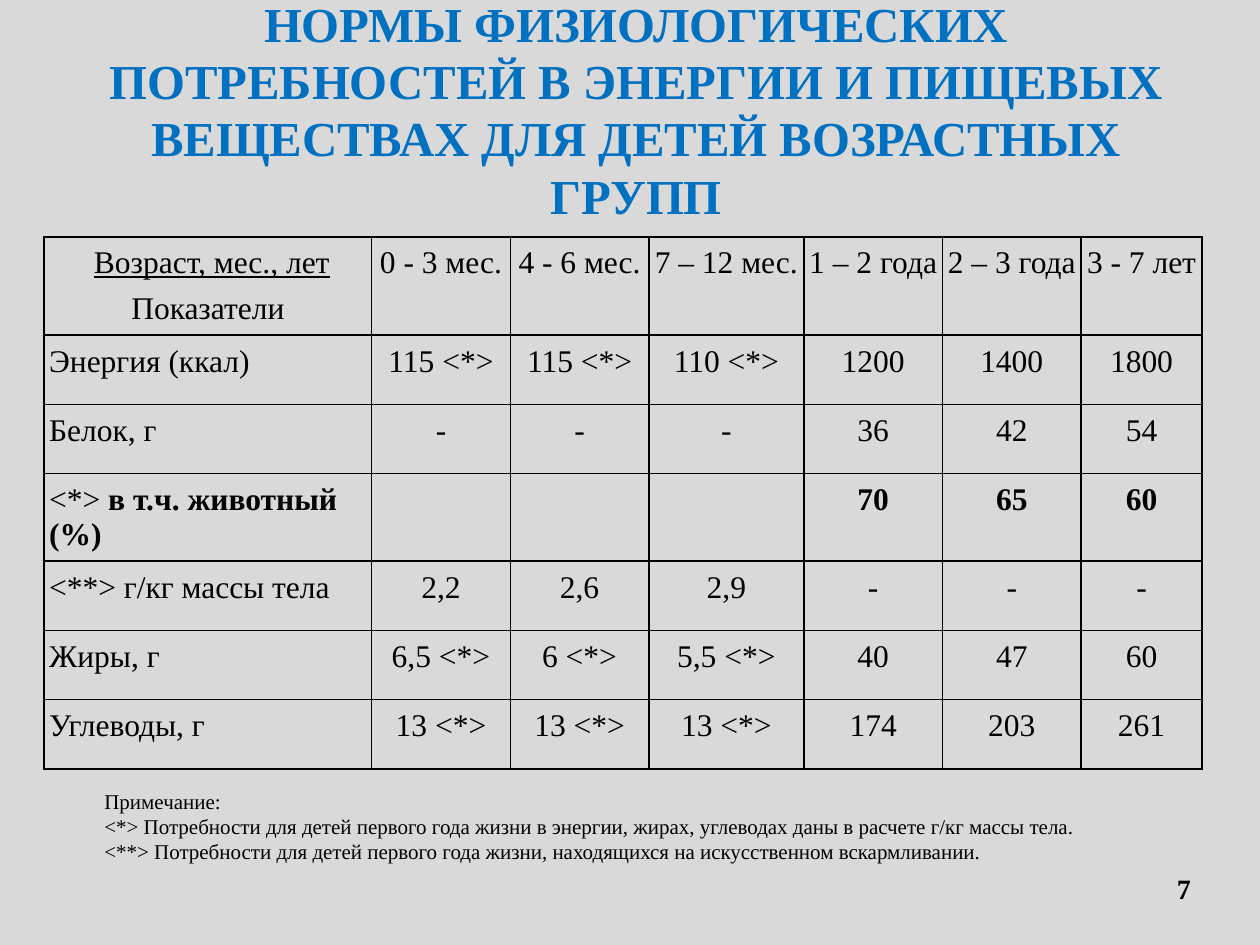
from lxml.etree import SubElement
from pptx import Presentation
from pptx.dml.color import RGBColor
from pptx.enum.text import MSO_ANCHOR, MSO_AUTO_SIZE, PP_ALIGN
from pptx.oxml.ns import qn
from pptx.util import Inches, Pt

TITLE = ("НОРМЫ ФИЗИОЛОГИЧЕСКИХ ПОТРЕБНОСТЕЙ В ЭНЕРГИИ И ПИЩЕВЫХ "
         "ВЕЩЕСТВАХ ДЛЯ ДЕТЕЙ ВОЗРАСТНЫХ ГРУПП")
AGE_GROUPS = ["0 - 3 мес.", "4 - 6 мес.", "7 – 12 мес.",
              "1 – 2 года", "2 – 3 года", "3 - 7 лет"]
NORMS = [
    ["Энергия (ккал)", "115 <*>", "115 <*>", "110 <*>", "1200", "1400", "1800"],
    ["Белок, г", "-", "-", "-", "36", "42", "54"],
    ["<*> в т.ч. животный (%)", "", "", "", "70", "65", "60"],
    ["<**> г/кг массы тела", "2,2", "2,6", "2,9", "-", "-", "-"],
    ["Жиры, г", "6,5 <*>", "6 <*>", "5,5 <*>", "40", "47", "60"],
    ["Углеводы, г", "13 <*>", "13 <*>", "13 <*>", "174", "203", "261"],
]
ANIMAL_PROTEIN_ROW = 3
COLUMN_WIDTHS = [2.6, 1.1, 1.1, 1.23, 1.1, 1.1, 0.96]
ROW_HEIGHTS = [0.78, 0.55, 0.55, 0.69, 0.55, 0.55, 0.55]
NOTES = [
    "Примечание:",
    "<*> Потребности для детей первого года жизни в энергии, жирах, "
    "углеводах даны в расчете г/кг массы тела.",
    "<**> Потребности для детей первого года жизни, находящихся на "
    "искусственном вскармливании.",
]


def color(value):
    return RGBColor.from_string(value)


def write(paragraph, text, size=18, bold=False, underline=False,
          fill="000000", font="Times New Roman", align=PP_ALIGN.LEFT):
    """Append a formatted run to a paragraph."""
    paragraph.alignment = align
    run = paragraph.add_run()
    run.text = text
    run.font.name = font
    run.font.size = Pt(size)
    run.font.bold = bold
    run.font.underline = underline
    run.font.color.rgb = color(fill)


class NormsSlide:
    background = "D9D9D9"
    accent = "0070C0"
    border = "000000"

    def __init__(self, presentation):
        self.slide = presentation.slides.add_slide(presentation.slide_layouts[5])
        fill = self.slide.background.fill
        fill.solid()
        fill.fore_color.rgb = color(self.background)

    def title(self, text, left, top, width, height):
        shape = self.slide.shapes.title
        shape.left, shape.top = Inches(left), Inches(top)
        shape.width, shape.height = Inches(width), Inches(height)
        frame = shape.text_frame
        frame.auto_size = MSO_AUTO_SIZE.NONE
        frame.word_wrap = True
        frame.vertical_anchor = MSO_ANCHOR.MIDDLE
        frame.margin_bottom = Inches(0.19)
        paragraph = frame.paragraphs[0]
        paragraph.line_spacing = 0.98
        write(paragraph, text, size=27.9, bold=True, fill=self.accent,
              align=PP_ALIGN.CENTER)

    def text_box(self, lines, left, top, width, height, indent=0, **style):
        shape = self.slide.shapes.add_textbox(
            Inches(left), Inches(top), Inches(width), Inches(height))
        frame = shape.text_frame
        frame.word_wrap = True
        frame.vertical_anchor = MSO_ANCHOR.MIDDLE
        for index, line in enumerate(lines):
            paragraph = frame.add_paragraph() if index else frame.paragraphs[0]
            if indent:
                paragraph._p.get_or_add_pPr().set("indent", str(Inches(indent)))
            write(paragraph, line, **style)

    def table(self, left, top, widths, heights):
        table = self.slide.shapes.add_table(
            len(heights), len(widths), Inches(left), Inches(top),
            Inches(sum(widths)), Inches(sum(heights))).table
        table.first_row = table.horz_banding = False
        for column, width in zip(table.columns, widths):
            column.width = Inches(width)
        for row, height in zip(table.rows, heights):
            row.height = Inches(height)
        for cell in table.iter_cells():
            self.style_cell(cell)
        return table

    def style_cell(self, cell):
        cell.margin_left = cell.margin_right = Inches(0.04)
        cell.margin_top = cell.margin_bottom = Inches(0.07)
        properties = cell._tc.get_or_add_tcPr()
        for side in ("lnL", "lnR", "lnT", "lnB"):
            line = SubElement(properties, qn(f"a:{side}"), w=str(Pt(1)))
            solid = SubElement(line, qn("a:solidFill"))
            SubElement(solid, qn("a:srgbClr"), val=self.border)
        cell.fill.background()


def fill_norms(table):
    # Corner cell and age groups
    corner = table.cell(0, 0).text_frame
    write(corner.paragraphs[0], "\u00a0", align=PP_ALIGN.CENTER)
    write(corner.paragraphs[0], "Возраст, мес., лет", underline=True,
          align=PP_ALIGN.CENTER)
    indicators = corner.add_paragraph()
    indicators.space_before = Pt(6)
    write(indicators, "Показатели", align=PP_ALIGN.CENTER)
    for column, group in enumerate(AGE_GROUPS, start=1):
        write(table.cell(0, column).text_frame.paragraphs[0], group,
              align=PP_ALIGN.CENTER)

    # Indicator names and values
    for row, (name, *values) in enumerate(NORMS, start=1):
        bold = row == ANIMAL_PROTEIN_ROW
        label = table.cell(row, 0).text_frame.paragraphs[0]
        if bold:
            mark, name = name.split(" ", 1)
            write(label, mark + " ")
        write(label, name, bold=bold)
        for column, value in enumerate(values, start=1):
            if value:
                write(table.cell(row, column).text_frame.paragraphs[0], value,
                      bold=bold, align=PP_ALIGN.CENTER)


def main():
    presentation = Presentation()
    presentation.slide_width, presentation.slide_height = Inches(10), Inches(7.5)
    norms = NormsSlide(presentation)

    # Heading
    norms.title(TITLE, 0.55, 0.44, 9, 1.02)

    # Norms by age
    fill_norms(norms.table(0.35, 1.88, COLUMN_WIDTHS, ROW_HEIGHTS))

    # Page number and notes
    norms.text_box(["7"], 8.15, 6.85, 1.4, 0.4, size=16, bold=True,
                   align=PP_ALIGN.RIGHT)
    norms.text_box(NOTES, 0.35, 6.2, 9.39, 0.71, indent=0.38, size=12,
                   align=PP_ALIGN.JUSTIFY)

    presentation.save("out.pptx")


if __name__ == "__main__":
    main()
